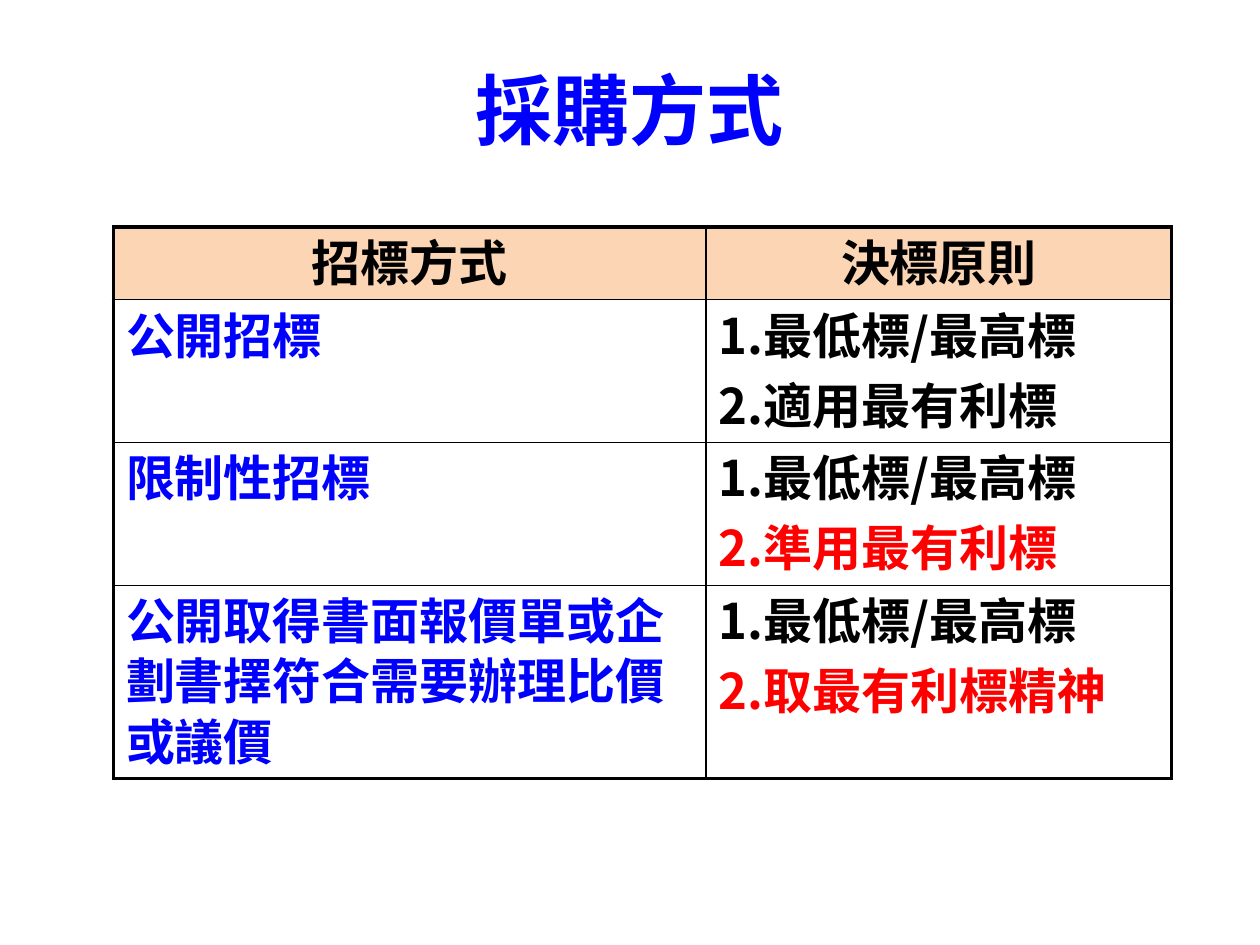
from lxml.etree import SubElement
from pptx import Presentation
from pptx.dml.color import RGBColor as Rgb
from pptx.enum.text import MSO_ANCHOR as Anchor, PP_ALIGN as Align
from pptx.oxml import parse_xml
from pptx.oxml.ns import nsdecls, qn
from pptx.util import Inches, Pt

COLORS = {"blue": "0000FF", "red": "FF0000", "black": "000000", "peach": "FCD5B5", "white": "FFFFFF"}
FONT = "Noto Sans CJK SC"
HEADINGS = ("招標方式", "決標原則")
LOWEST_BID = "1.最低標/最高標"
METHODS = (
    ("公開招標", "2.適用最有利標", "black"),
    ("限制性招標", "2.準用最有利標", "red"),
    ("公開取得書面報價單或企劃書擇符合需要辦理比價或議價", "2.取最有利標精神", "red"),
)
COLUMN_SHARES = (0.56, 0.44)
ROW_SHARES = (0.14, 0.25, 0.26, 0.35)
THICK, THIN = 2.25, 1


def write(paragraph, text, size=28, color="black", align=Align.LEFT, line=None, before=None):
    paragraph.alignment = align
    paragraph.line_spacing = line
    paragraph.space_before = before
    run = paragraph.add_run()
    run.text = text
    run.font.size = Pt(size)
    run.font.bold = True
    run.font.name = FONT
    run.font.color.rgb = Rgb.from_string(COLORS[color])
    SubElement(run.font._element, qn("a:ea"), typeface=FONT)


def fill_cell(cell, lines, fill="white", align=Align.LEFT):
    cell.fill.solid()
    cell.fill.fore_color.rgb = Rgb.from_string(COLORS[fill])
    frame = cell.text_frame
    for index, (text, color) in enumerate(lines):
        paragraph = frame.add_paragraph() if index else frame.paragraphs[0]
        write(paragraph, text, color=color, align=align, line=0.85, before=Pt(5.6))


def draw_borders(cell, **widths):
    properties = cell._tc.get_or_add_tcPr()
    for index, (side, width) in enumerate(widths.items()):
        properties.insert(index, parse_xml(
            f'<a:ln{side} {nsdecls("a")} w="{Pt(width)}"><a:solidFill>'
            f'<a:srgbClr val="{COLORS["black"]}"/></a:solidFill></a:ln{side}>'))


def place_title(slide, left, top, width, height):
    title = slide.shapes.title
    title.left, title.top, title.width, title.height = left, top, width, height
    title.text_frame.vertical_anchor = Anchor.MIDDLE
    write(title.text_frame.paragraphs[0], "採購方式", size=44, color="blue", align=Align.CENTER)


def place_methods(slide, left, top, width, height):
    rows, columns = len(ROW_SHARES), len(COLUMN_SHARES)
    frame = slide.shapes.add_table(rows, columns, left, top, width, height)
    table = frame.table
    table.horz_banding = False
    for column, share in zip(table.columns, COLUMN_SHARES):
        column.width = int(width * share)
    for row, share in zip(table.rows, ROW_SHARES):
        row.height = int(height * share)

    for c, heading in enumerate(HEADINGS):
        fill_cell(table.cell(0, c), [(heading, "black")], fill="peach", align=Align.CENTER)
    for r, (method, principle, color) in enumerate(METHODS, start=1):
        fill_cell(table.cell(r, 0), [(method, "blue")])
        fill_cell(table.cell(r, 1), [(LOWEST_BID, "black"), (principle, color)])

    for r in range(rows):
        for c in range(columns):
            draw_borders(
                table.cell(r, c),
                L=THICK if c == 0 else THIN,
                R=THICK if c == columns - 1 else THIN,
                T=THICK if r == 0 else THIN,
                B=THICK if r == rows - 1 else THIN,
            )


def main():
    deck = Presentation()
    deck.slide_width, deck.slide_height = Inches(10), Inches(7.5)
    slide = deck.slides.add_slide(deck.slide_layouts[5])

    def box(x, y, w, h):
        return (int(deck.slide_width * x), int(deck.slide_height * y),
                int(deck.slide_width * w), int(deck.slide_height * h))

    place_title(slide, *box(0.05, 0.03, 0.9, 0.17))
    place_methods(slide, *box(0.09, 0.24, 0.84, 0.53))
    deck.save("out.pptx")


if __name__ == "__main__":
    main()
